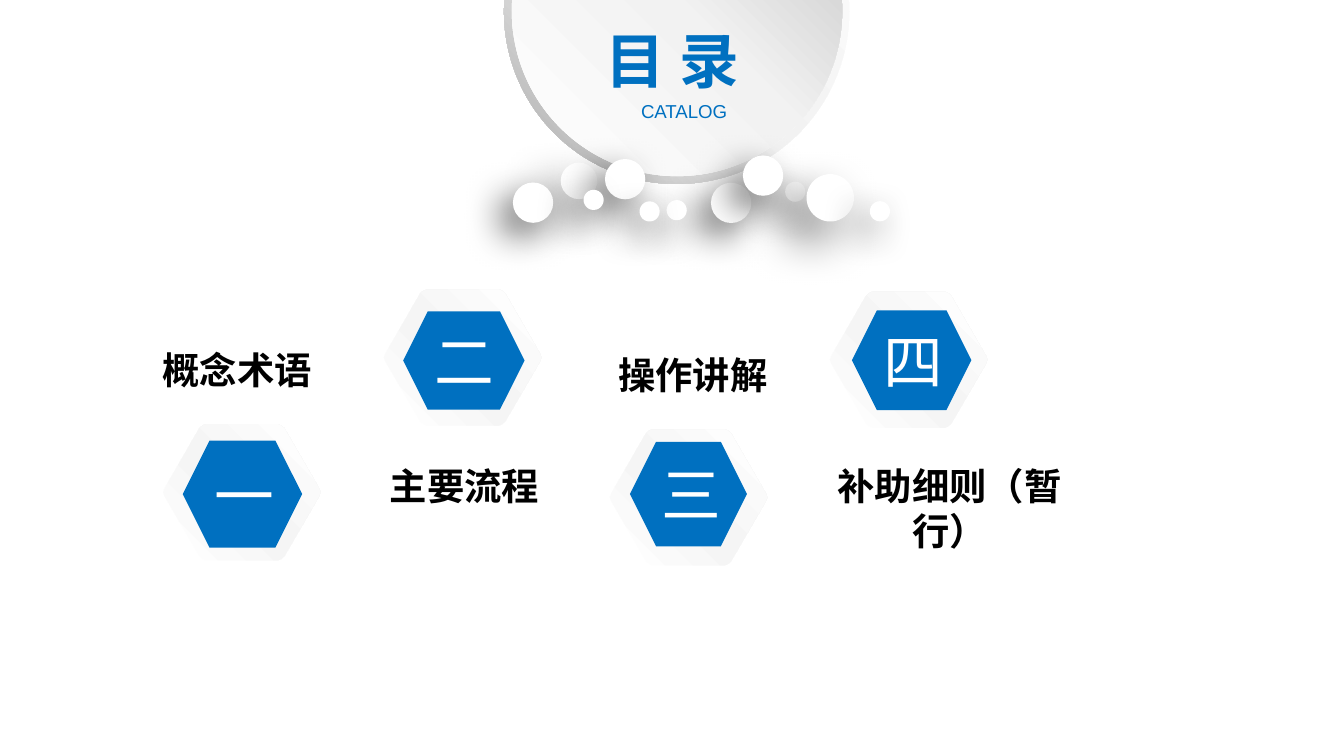
from lxml.etree import SubElement
from pptx import Presentation
from pptx.dml.color import RGBColor
from pptx.enum.shapes import MSO_SHAPE
from pptx.enum.text import MSO_ANCHOR, MSO_AUTO_SIZE, PP_ALIGN
from pptx.oxml.ns import qn
from pptx.util import Pt

BLUE, WHITE, BLACK = "0070C0", "FFFFFF", "000000"
CJK = "Noto Sans CJK SC"


def color(value):
    """Turn a hex string into a colour."""
    return RGBColor.from_string(value)


class CatalogSlide:
    """Holds the style and the current slide of the catalogue."""

    def __init__(self, presentation):
        """Add a blank slide and draw straight onto it."""
        self.slide = presentation.slides.add_slide(presentation.slide_layouts[6])
        self.canvas = self.slide.shapes

    def group(self):
        """Send the next elements into a new group."""
        self.canvas = self.slide.shapes.add_group_shape().shapes

    def ungroup(self):
        """Send the next elements straight onto the slide."""
        self.canvas = self.slide.shapes

    def paint(self, shape, fill, angle):
        """Give a shape a plain or gradient fill without line or shadow."""
        if isinstance(fill, str):
            shape.fill.solid()
            shape.fill.fore_color.rgb = color(fill)
        else:
            shape.fill.gradient()
            shape.fill.gradient_angle = 360 - angle
            stops = shape.element.spPr.find(qn("a:gradFill")).find(qn("a:gsLst"))
            stops.clear()
            for position, shade in fill:
                stop = SubElement(stops, qn("a:gs"), pos=str(position * 1000))
                SubElement(stop, qn("a:srgbClr"), val=shade)
        shape.line.fill.background()
        shape.shadow.inherit = False
        return shape

    def preset(self, kind, left, top, width, height, fill, angle=0):
        """Draw a preset shape."""
        shape = self.canvas.add_shape(kind, Pt(left), Pt(top), Pt(width), Pt(height))
        return self.paint(shape, fill, angle)

    def ball(self, left, top, size, opacity, blur, distance):
        """Draw a white ball that casts a soft shadow."""
        ball = self.preset(MSO_SHAPE.OVAL, left, top, size, size, WHITE)
        effects = ball.element.spPr.find(qn("a:effectLst"))
        shadow = SubElement(effects, qn("a:outerShdw"), blurRad=str(Pt(blur)),
                            dist=str(Pt(distance)), dir=str(135 * 60000),
                            algn="tr", rotWithShape="0")
        tone = SubElement(shadow, qn("a:srgbClr"), val=BLACK)
        SubElement(tone, qn("a:alpha"), val=str(opacity * 1000))

    def soft_hexagon(self, left, top, width, height, fill, angle=0):
        """Draw a hexagon with rounded corners, mirrored from one quarter."""
        quarter = [(1, 0.5), (0.99, 0.47), (0.77, 0.03), (0.75, 0.01), (0.73, 0)]
        upper = quarter + [(1 - x, y) for x, y in reversed(quarter)]
        outline = upper + [(1 - x, 1 - y) for x, y in upper]
        points = [(Pt(left + x * width), Pt(top + y * height)) for x, y in outline]
        builder = self.canvas.build_freeform(*points[0])
        builder.add_line_segments(points[1:], close=True)
        self.paint(builder.convert_to_shape(), fill, angle)

    def add_words(self, frame, words, size, font, tint, bold=False, align=PP_ALIGN.CENTER):
        """Put one run into a text frame."""
        paragraph = frame.paragraphs[0]
        paragraph.alignment = align
        run = paragraph.add_run()
        run.text = words
        run.font.size = Pt(size)
        run.font.name = font
        run.font.bold = bold
        run.font.color.rgb = color(tint)
        if font == CJK:
            SubElement(run.font._element, qn("a:ea"), typeface=font)

    def text(self, left, top, width, height, *style, **options):
        """Add a wrapping text box and return its frame."""
        box = self.canvas.add_textbox(Pt(left), Pt(top), Pt(width), Pt(height))
        frame = box.text_frame
        frame.word_wrap = True
        frame.auto_size = MSO_AUTO_SIZE.SHAPE_TO_FIT_TEXT
        self.add_words(frame, *style, **options)
        return frame

    def badge(self, numeral, plate_left, plate_top, left, top, width, height):
        """Draw a numbered blue hexagon on its pale plate."""
        self.group()
        self.soft_hexagon(plate_left, plate_top, 85, 73.5, WHITE)
        self.soft_hexagon(plate_left + 0.3, plate_top + 0.3, 84.4, 72.9,
                          [(0, WHITE), (47, "F5F5F5"), (100, WHITE)], 315)
        hexagon = self.preset(MSO_SHAPE.HEXAGON, left, top, width, height, BLUE)
        hexagon.text_frame.vertical_anchor = MSO_ANCHOR.MIDDLE
        self.add_words(hexagon.text_frame, numeral, 32, "Calibri", WHITE)


def main():
    """Build the catalogue slide and save it."""
    presentation = Presentation()
    presentation.slide_width, presentation.slide_height = Pt(720), Pt(405)
    catalog = CatalogSlide(presentation)

    catalog.group()
    rim = catalog.preset(MSO_SHAPE.DONUT, 270, -86.4, 185, 185,
                         [(0, WHITE), (55, "F2F2F2"), (100, "A6A6A6")], 135)
    rim.adjustments[0] = 0.049
    catalog.preset(MSO_SHAPE.OVAL, 274.2, -82.6, 177, 177,
                   [(0, WHITE), (51, "F2F2F2"), (100, "BFBFBF")], 315)
    catalog.ungroup()

    crisp, diffuse = (60, 20, 10), (50, 25, 15)
    balls = [
        (380.9, 97.9, 21.6, crisp), (357.1, 107.2, 10.8, crisp),
        (420.6, 97.3, 10.8, crisp), (300.4, 87.1, 19.6, diffuse),
        (324.1, 85.2, 21.6, crisp), (342.6, 107.9, 10.8, crisp),
        (432.1, 93.3, 25.4, diffuse), (274.8, 97.8, 21.6, crisp),
        (398, 83.3, 21.6, crisp), (312.6, 101.7, 10.8, crisp),
        (466, 107.8, 10.8, crisp),
    ]
    for left, top, size, shadow in balls:
        catalog.ball(left, top, size, *shadow)

    catalog.text(317.5, 9.4, 97.2, 46, "目 录", 32, CJK, BLUE,
                 bold=True, align=PP_ALIGN.LEFT)
    subtitle = catalog.text(312.5, 44.8, 108, 30, "CATALOG", 10, "Arial", BLUE)
    subtitle.auto_size = MSO_AUTO_SIZE.NONE
    subtitle.vertical_anchor = MSO_ANCHOR.MIDDLE
    subtitle.margin_left = subtitle.margin_right = Pt(5)
    subtitle.margin_top = subtitle.margin_bottom = Pt(2.5)

    topics = [
        ("概念术语", 49.7, 182.2), ("主要流程", 171.4, 244.8),
        ("操作讲解", 293.8, 185), ("补助细则（暂行）", 431.3, 244.8),
    ]
    for topic, left, top in topics:
        catalog.text(left, top, 154.8, 31.7, topic, 20, CJK, BLACK, bold=True)

    badges = [
        ("一", 87.1, 227, 97.9, 236, 64, 57.4),
        ("二", 205.4, 154.8, 216, 166.8, 65, 52.7),
        ("三", 326.4, 229.7, 337.5, 236.7, 62.7, 56),
        ("四", 444.3, 156, 456.4, 166.3, 64, 53.4),
    ]
    for badge in badges:
        catalog.badge(*badge)

    presentation.save("out.pptx")


if __name__ == "__main__":
    main()
